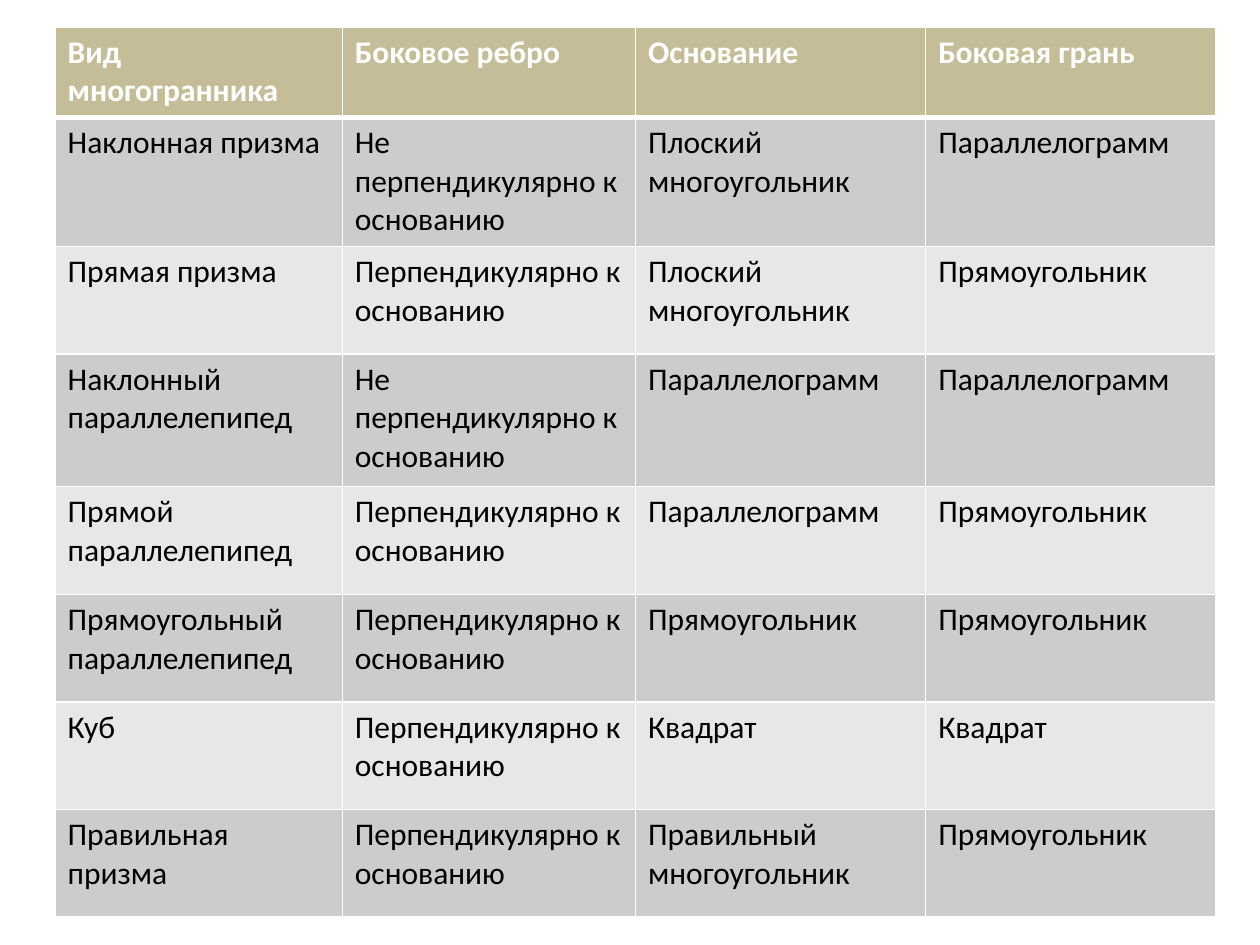
import pptx
import pptx.util
import pptx.dml.color
import pptx.oxml
import pptx.oxml.ns
from pptx.util import Cm

FONT = "Calibri"
WHITE, BLACK = "FFFFFF", "000000"
HEAD, DARK, LIGHT = "C4BD97", "CCCCCC", "E7E7E7"

# Repeated wording
PERP = "Перпендикулярно к основанию"
SLANT = "Не перпендикулярно к основанию"
FLAT = "Плоский многоугольник"
PARA = "Параллелограмм"
RECT = "Прямоугольник"

ROWS = [
    ("Вид многогранника", "Боковое ребро", "Основание", "Боковая грань"),
    ("Наклонная призма", SLANT, FLAT, PARA),
    ("Прямая призма", PERP, FLAT, RECT),
    ("Наклонный параллелепипед", SLANT, PARA, PARA),
    ("Прямой параллелепипед", PERP, PARA, RECT),
    ("Прямоугольный параллелепипед", PERP, RECT, RECT),
    ("Куб", PERP, "Квадрат", "Квадрат"),
    ("Правильная призма", PERP, "Правильный многоугольник", RECT),
]
WIDTHS = [5.79, 5.91, 5.85, 5.85]
HEIGHTS = [1.83, 2.6, 2.17, 2.67] + [2.17] * 4


def color(code):
    return pptx.dml.color.RGBColor.from_string(code)


def edge(cell, side, width):
    """Draw one white border; call before the cell is filled."""
    space = pptx.oxml.ns.nsdecls("a")
    line = pptx.oxml.parse_xml(
        f'<a:ln{side} {space} w="{pptx.util.Pt(width)}"><a:solidFill>'
        f'<a:srgbClr val="{WHITE}"/></a:solidFill></a:ln{side}>')
    cell._tc.get_or_add_tcPr().append(line)


def style(cell, text, row):
    head = row == 0
    # Borders: a thick rule parts the header from the body
    for side in "LRTB":
        thick = (head and side == "B") or (row == 1 and side == "T")
        edge(cell, side, 3 if thick else 1)
    cell.fill.solid()
    fill = HEAD if head else DARK if row % 2 else LIGHT
    cell.fill.fore_color.rgb = color(fill)
    # Text
    cell.text_frame.text = text
    font = cell.text_frame.paragraphs[0].runs[0].font
    font.name, font.size, font.bold = FONT, pptx.util.Pt(18), head
    font.color.rgb = color(WHITE if head else BLACK)


def grid(slide):
    frame = slide.shapes.add_table(
        len(ROWS), len(WIDTHS), Cm(1.11), Cm(0.54),
        Cm(sum(WIDTHS)), Cm(sum(HEIGHTS)))
    table = frame.table
    for col, width in zip(table.columns, WIDTHS):
        col.width = Cm(width)
    for row, height in zip(table.rows, HEIGHTS):
        row.height = Cm(height)
    for i, texts in enumerate(ROWS):
        for j, text in enumerate(texts):
            style(table.cell(i, j), text, i)


def main():
    deck = pptx.Presentation()
    deck.slide_width, deck.slide_height = Cm(25.4), Cm(19.05)
    # Blank layout: the slide has no title
    slide = deck.slides.add_slide(deck.slide_layouts[6])
    grid(slide)
    deck.save("out.pptx")


if __name__ == "__main__":
    main()
